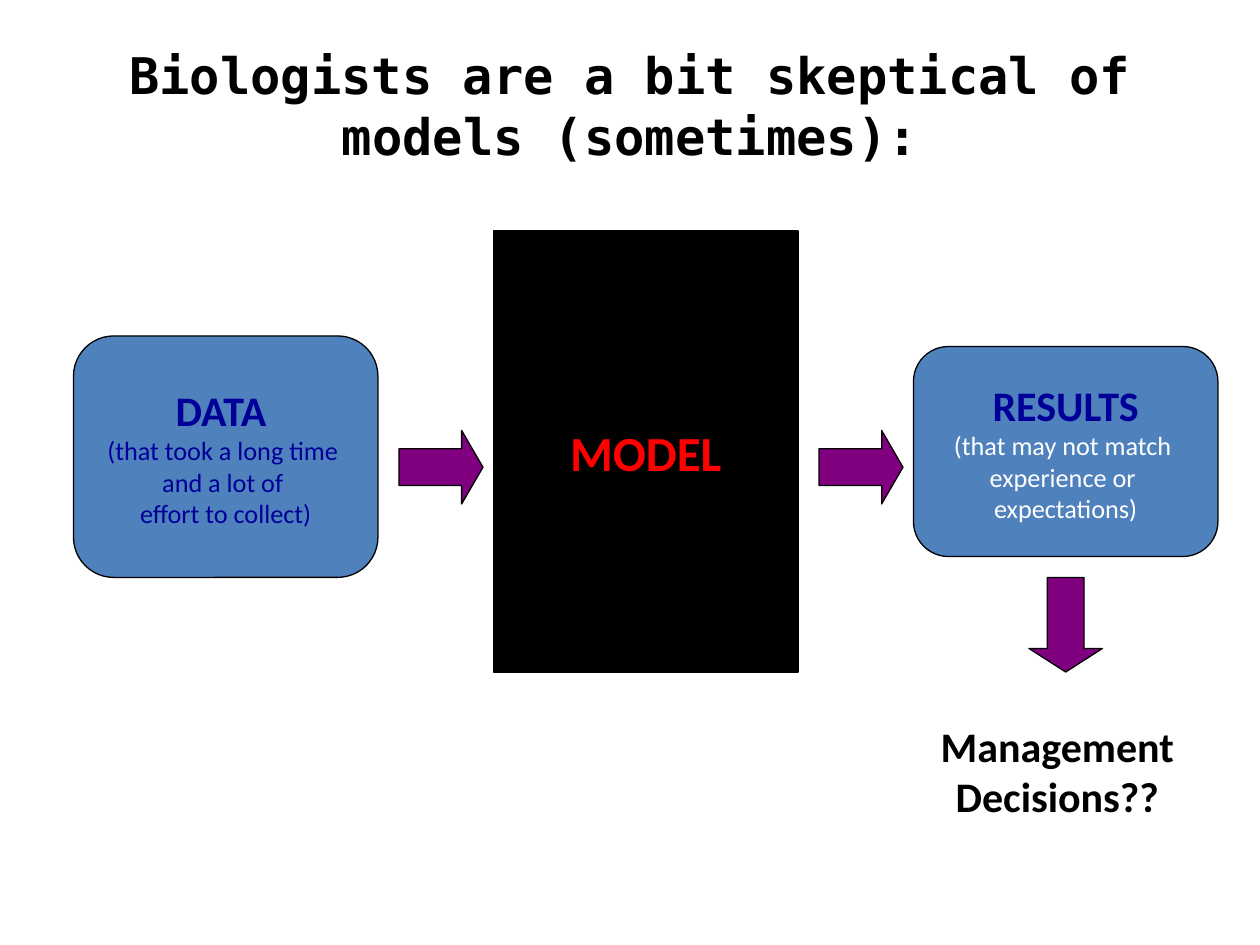
"""Build a slide showing how biologists see a model between data and results."""
import dataclasses

import pptx
import pptx.dml.color
import pptx.enum.shapes
import pptx.enum.text
import pptx.util

SCALE = 914400 // 120
COLORS = {
    "black": "000000",
    "white": "FFFFFF",
    "blue": "4F81BD",
    "navy": "000099",
    "red": "FF0000",
    "purple": "800080",
}
KINDS = pptx.enum.shapes.MSO_SHAPE


@dataclasses.dataclass(frozen=True)
class Line:
    text: str
    size: float
    color: str
    bold: bool = False
    font: str = "Calibri"


@dataclasses.dataclass(frozen=True)
class Block:
    kind: pptx.enum.shapes.MSO_SHAPE
    frame: tuple[int, int, int, int]
    fill: str
    lines: tuple[Line, ...] = ()
    adjustments: tuple[float, ...] = ()


def note(text: str, color: str) -> Line:
    return Line(text, 15, color)


def heading(text: str, color: str) -> Line:
    return Line(text, 24, color, bold=True)


BLOCKS = (
    Block(KINDS.FLOWCHART_ALTERNATE_PROCESS, (70, 320, 290, 230), "blue", (
        heading("DATA ", "navy"),
        note("(that took a long time ", "navy"),
        note("and a lot of ", "navy"),
        note("effort to collect)", "navy"),
    )),
    Block(KINDS.FLOWCHART_PROCESS, (470, 220, 290, 420), "black", (
        Line("MODEL", 28, "red", bold=True),
    )),
    Block(KINDS.FLOWCHART_ALTERNATE_PROCESS, (870, 330, 290, 200), "blue", (
        heading("RESULTS", "navy"),
        note("(that may not match ", "white"),
        note("experience or ", "white"),
        note("expectations)", "white"),
    )),
    Block(KINDS.RIGHT_ARROW, (380, 410, 80, 70), "purple", adjustments=(0.5, 0.29)),
    Block(KINDS.RIGHT_ARROW, (780, 410, 80, 70), "purple", adjustments=(0.5, 0.29)),
    Block(KINDS.DOWN_ARROW, (980, 550, 70, 90), "purple", adjustments=(0.5, 0.32)),
)
TITLE = Line("Biologists are a bit skeptical of models (sometimes):", 28.8,
             "black", bold=True, font="DejaVu Sans Mono")
DECISIONS = (heading("Management", "black"), heading("Decisions??", "black"))


def px(length: int) -> pptx.util.Emu:
    return pptx.util.Emu(length * SCALE)


def rgb(name: str) -> pptx.dml.color.RGBColor:
    return pptx.dml.color.RGBColor.from_string(COLORS[name])


def write_lines(box, lines: tuple[Line, ...], wrap: bool = False) -> None:
    frame = box.text_frame
    frame.word_wrap = wrap
    frame.text = "\n".join(line.text for line in lines)
    for para, line in zip(frame.paragraphs, lines):
        para.alignment = pptx.enum.text.PP_ALIGN.CENTER
        for span in para.runs:
            span.font.name = line.font
            span.font.size = pptx.util.Pt(line.size)
            span.font.bold = line.bold
            span.font.color.rgb = rgb(line.color)


def draw_title(page) -> None:
    title = page.shapes.title
    title.left, title.top, title.width, title.height = map(px, (60, 50, 1080, 100))
    write_lines(title, (TITLE,), wrap=True)
    title.text_frame.auto_size = pptx.enum.text.MSO_AUTO_SIZE.NONE
    title.text_frame.vertical_anchor = pptx.enum.text.MSO_ANCHOR.MIDDLE


def draw_block(page, block: Block) -> None:
    shape = page.shapes.add_shape(block.kind, *map(px, block.frame))
    shape.shadow.inherit = False
    shape.fill.solid()
    shape.fill.fore_color.rgb = rgb(block.fill)
    shape.line.color.rgb = rgb("black")
    shape.line.width = pptx.util.Pt(0.75)
    for index, value in enumerate(block.adjustments):
        shape.adjustments[index] = value
    if block.lines:
        write_lines(shape, block.lines)
        shape.text_frame.vertical_anchor = pptx.enum.text.MSO_ANCHOR.MIDDLE


def draw_decisions(page) -> None:
    box = page.shapes.add_textbox(*map(px, (850, 680, 314, 108)))
    write_lines(box, DECISIONS)
    box.text_frame.auto_size = pptx.enum.text.MSO_AUTO_SIZE.SHAPE_TO_FIT_TEXT


def main() -> None:
    deck = pptx.Presentation()
    deck.slide_width, deck.slide_height = px(1200), px(900)
    page = deck.slides.add_slide(deck.slide_layouts.get_by_name("Title Only"))
    draw_title(page)
    for block in BLOCKS:
        draw_block(page, block)
    draw_decisions(page)
    deck.save("out.pptx")


if __name__ == "__main__":
    main()
